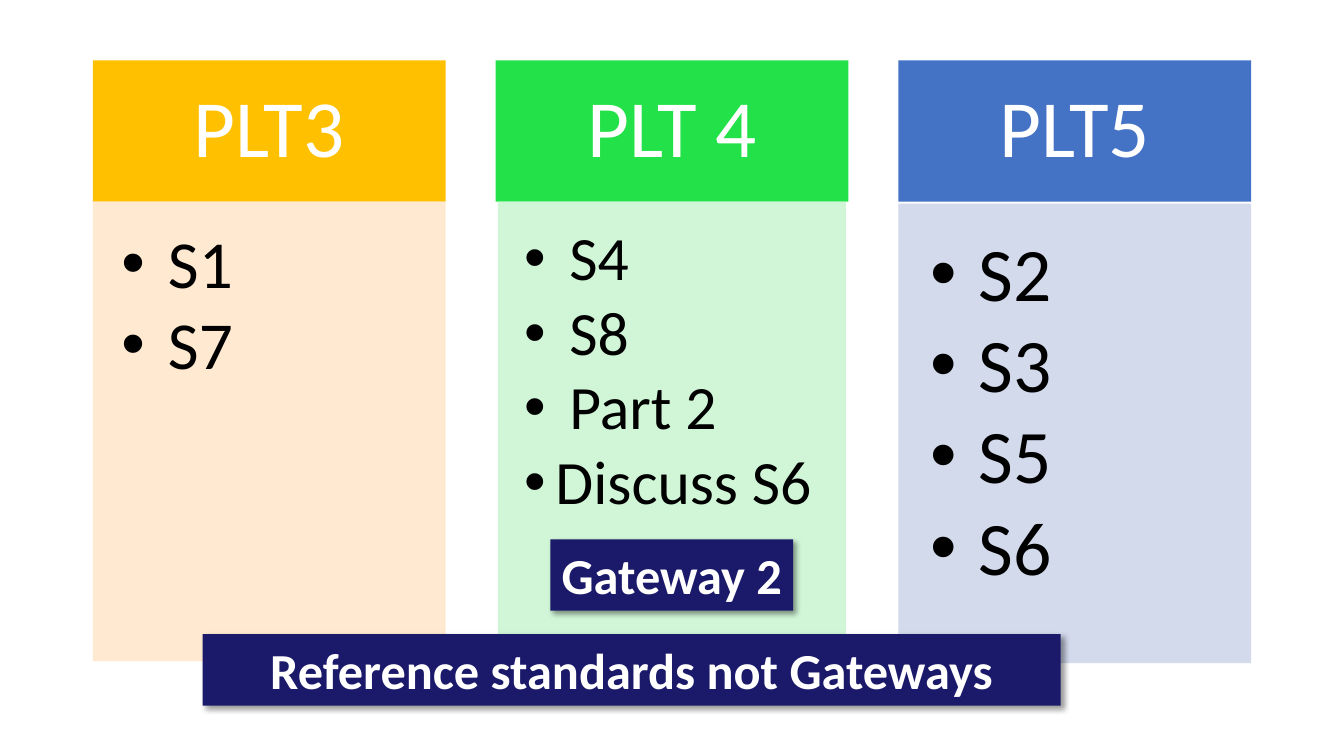
from lxml import etree
from pptx import Presentation
from pptx import util as u
from pptx.dml.color import RGBColor
from pptx.enum import shapes, text
from pptx.oxml import ns

FONT = "Calibri"
COLORS = {
    "amber": "FFC000", "amber_pale": "FFE8CC",
    "green": "23E148", "green_pale": "CCF6D3",
    "blue": "4472C4", "blue_pale": "CFD6EA",
    "navy": "1B1A6A", "white": "FFFFFF", "black": "000000",
}
COLUMNS = [
    {"heading": "PLT3", "color": "amber", "size": 48, "inset": 0, "drop": 0,
     "standards": ["S1", "S7"]},
    {"heading": "PLT 4", "color": "green", "size": 44, "inset": 0.06, "drop": 0,
     "standards": ["S4", "S8", "Part 2", "Discuss S6"]},
    {"heading": "PLT5", "color": "blue", "size": 54, "inset": 0, "drop": 0.05,
     "standards": ["S2", "S3", "S5", "S6"]},
]
TIGHT_STANDARDS = {"Discuss S6"}
LEFT, TOP, WIDTH, PITCH = 2.34, 1.52, 8.89, 10.15
HEADING_HEIGHT, PANEL_HEIGHT = 3.56, 11.58


def add_box(slide, box, color):
    """Add a plain filled rectangle at the given box in centimetres."""
    rect = slide.shapes.add_shape(
        shapes.MSO_SHAPE.RECTANGLE, *[u.Cm(length) for length in box])
    rect.shadow.inherit = False
    rect.fill.solid()
    rect.fill.fore_color.rgb = RGBColor.from_string(COLORS[color])
    rect.line.fill.background()
    return rect


def style_text(paragraph, size, color, bold=False):
    """Set the font of every run in a paragraph."""
    for run in paragraph.runs:
        run.font.name = FONT
        run.font.size = u.Pt(size)
        run.font.bold = bold
        run.font.color.rgb = RGBColor.from_string(COLORS[color])


def add_alpha(color_element, percent):
    """Give a colour element an opacity."""
    alpha = etree.SubElement(color_element, ns.qn("a:alpha"))
    alpha.set("val", str(percent * 1000))


def add_heading(slide, box, heading, color):
    """Add the coloured heading of a column."""
    block = add_box(slide, box, color)
    frame = block.text_frame
    frame.text = heading
    frame.vertical_anchor = text.MSO_ANCHOR.MIDDLE
    paragraph = frame.paragraphs[0]
    paragraph.alignment = text.PP_ALIGN.CENTER
    paragraph.line_spacing = 0.9
    style_text(paragraph, 58, "white")


def add_standards(slide, box, standards, color, size):
    """Add the pale panel with its bulleted standards."""
    panel = add_box(slide, box, color)
    add_alpha(panel.fill._xPr.find(".//" + ns.qn("a:srgbClr")), 90)
    frame = panel.text_frame
    frame.word_wrap = True
    frame.vertical_anchor = text.MSO_ANCHOR.TOP
    frame.margin_left = frame.margin_right = frame.margin_top = u.Cm(0.015 * size)
    frame.text = "\n".join(standards)
    for paragraph in frame.paragraphs:
        paragraph.alignment = text.PP_ALIGN.LEFT
        paragraph.line_spacing = 0.9
        paragraph.space_after = u.Pt(round(0.13 * size, 1))
        indent = 0.79 if paragraph.text in TIGHT_STANDARDS else 0.79 + 0.008 * size
        properties = paragraph._p.get_or_add_pPr()
        properties.set("marL", str(u.Cm(indent)))
        properties.set("indent", str(-u.Cm(indent)))
        bullet_font = etree.SubElement(properties, ns.qn("a:buFont"))
        bullet_font.set("typeface", "Arial")
        etree.SubElement(properties, ns.qn("a:buChar")).set("char", "•")
        style_text(paragraph, size, "black")


def add_column(slide, box, column):
    """Add a heading and its panel of standards inside the box."""
    left, top, width, height = box
    inset = column["inset"]
    add_heading(slide, (left, top, width, HEADING_HEIGHT),
                column["heading"], column["color"])
    panel_box = (left + inset, top + HEADING_HEIGHT + column["drop"],
                 width - 2 * inset, height - HEADING_HEIGHT)
    add_standards(slide, panel_box, column["standards"],
                  column["color"] + "_pale", column["size"])


def add_banner(slide, box, message, wrap):
    """Add a navy banner with a soft shadow and bold white text."""
    banner = add_box(slide, box, "navy")
    effects = banner._element.spPr.find(ns.qn("a:effectLst"))
    shadow = etree.SubElement(effects, ns.qn("a:outerShdw"))
    for key, value in {"blurRad": u.Pt(4), "dist": u.Pt(3), "dir": 45 * 60000,
                       "algn": "tl", "rotWithShape": 0}.items():
        shadow.set(key, str(value))
    shade = etree.SubElement(shadow, ns.qn("a:srgbClr"))
    shade.set("val", COLORS["black"])
    add_alpha(shade, 40)
    frame = banner.text_frame
    frame.text = message
    frame.word_wrap = wrap
    frame.auto_size = text.MSO_AUTO_SIZE.SHAPE_TO_FIT_TEXT
    frame.vertical_anchor = text.MSO_ANCHOR.TOP
    frame.paragraphs[0].alignment = text.PP_ALIGN.CENTER
    style_text(frame.paragraphs[0], 36, "white", bold=True)


def main():
    """Build the slide of standards and save it."""
    deck = Presentation()
    deck.slide_width, deck.slide_height = u.Cm(33.87), u.Cm(19.05)
    slide = deck.slides.add_slide(deck.slide_layouts[6])
    for index, column in enumerate(COLUMNS):
        box = (LEFT + index * PITCH, TOP, WIDTH, HEADING_HEIGHT + PANEL_HEIGHT)
        add_column(slide, box, column)
    add_banner(slide, (13.87, 13.59, 6.12, 1.8), "Gateway 2", wrap=False)
    add_banner(slide, (5.11, 15.98, 21.62, 1.8),
               "Reference standards not Gateways", wrap=True)
    deck.save("out.pptx")


if __name__ == "__main__":
    main()
